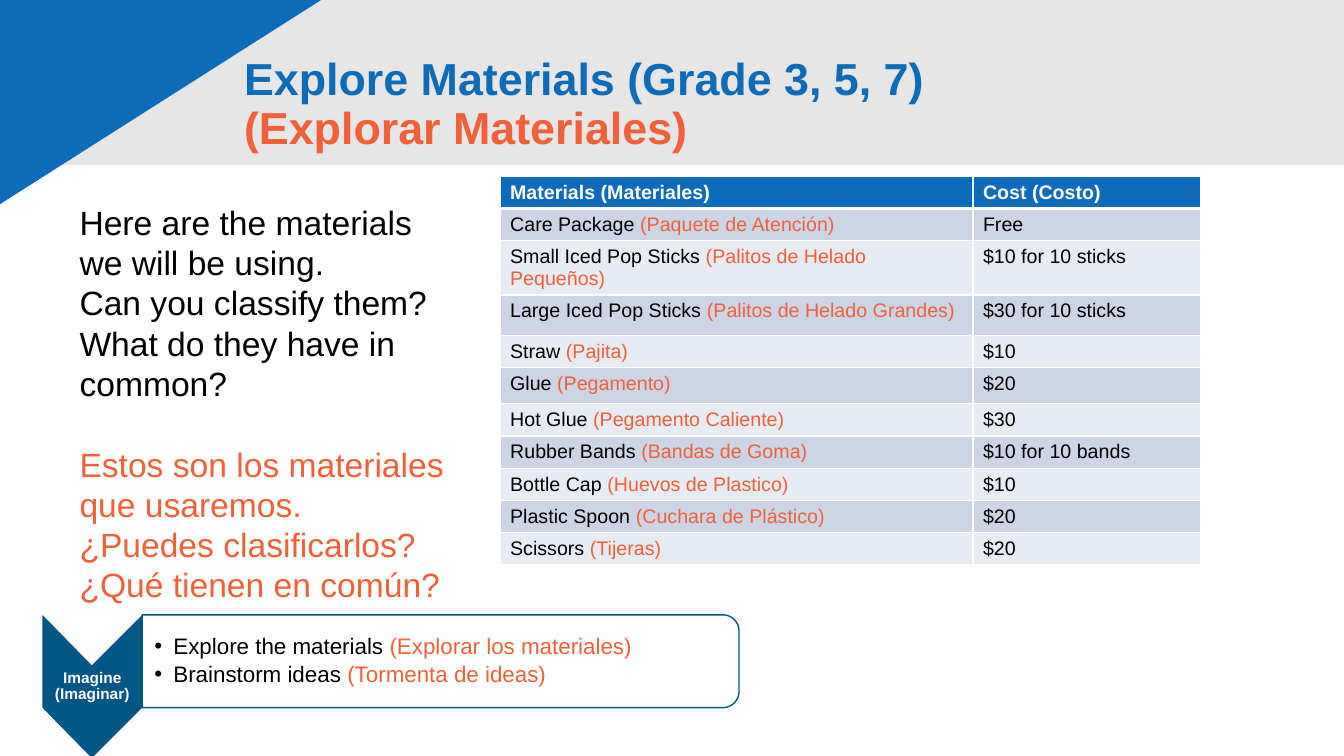
from math import cos, pi, sin

from lxml import etree
from pptx import Presentation
from pptx.dml.color import RGBColor
from pptx.enum.shapes import MSO_SHAPE
from pptx.enum.text import MSO_ANCHOR, PP_ALIGN
from pptx.oxml.ns import qn
from pptx.util import Pt

PX = 9144
RECTANGLE = MSO_SHAPE.RECTANGLE
RIGHT_TRIANGLE = MSO_SHAPE.RIGHT_TRIANGLE
MIDDLE = MSO_ANCHOR.MIDDLE
LEFT = PP_ALIGN.LEFT
CENTER = PP_ALIGN.CENTER

THEME = {
    "font": "Arial",
    "blue": RGBColor.from_string("0D6CB9"),
    "orange": RGBColor.from_string("F16038"),
    "navy": RGBColor.from_string("005786"),
    "gray": RGBColor.from_string("E7E6E6"),
    "black": RGBColor.from_string("000000"),
    "white": RGBColor.from_string("FFFFFF"),
    "bands": [RGBColor.from_string("E7EBF3"), RGBColor.from_string("CCD4E6")],
    "title": 32, "body": 24, "step": 16, "table": 14, "label": 11,
}


def add_text(paragraph, text, *, size, color="black", bold=False):
    run = paragraph.add_run()
    run.text = text
    run.font.name = THEME["font"]
    run.font.size = Pt(THEME[size])
    run.font.bold = bold
    run.font.color.rgb = THEME[color]


def add_outline(points, color):
    corners = [(round(x * PX), round(y * PX)) for x, y in points]
    builder = slide.shapes.build_freeform(*corners[0])
    builder.add_line_segments(corners[1:], close=True)
    shape = builder.convert_to_shape()
    shape.shadow.inherit = False
    shape.fill.solid()
    shape.fill.fore_color.rgb = THEME[color]
    shape.text_frame.word_wrap = True
    shape.text_frame.vertical_anchor = MIDDLE
    return shape


presentation = Presentation()
presentation.slide_width = 1333 * PX
presentation.slide_height = 750 * PX
slide = presentation.slides.add_slide(presentation.slide_layouts[5])

backdrop = [
    (RECTANGLE, (-26, -19, 1359, 183), "gray"),
    (RIGHT_TRIANGLE, (-257, -172, 846, 538), "blue"),
]
for preset, bounds, color in backdrop:
    shape = slide.shapes.add_shape(preset, *(value * PX for value in bounds))
    shape.shadow.inherit = False
    shape.fill.solid()
    shape.fill.fore_color.rgb = THEME[color]
    shape.line.fill.background()
    if preset == RIGHT_TRIANGLE:
        shape.rotation = 180
        shape.element.spPr.xfrm.set("flipH", "1")

chevron = add_outline(
    [(141, 610), (141, 702), (91, 752), (42, 702), (42, 610), (91, 660)], "navy")
chevron.line.fill.background()
frame = chevron.text_frame
frame.margin_left = frame.margin_right = PX
frame.margin_top = frame.margin_bottom = 47 * PX
paragraph = frame.paragraphs[0]
paragraph.alignment = CENTER
paragraph.line_spacing = 0.9
add_text(paragraph, "Imagine (Imaginar)", size="label", color="white", bold=True)

radius, steps = 16, 12
angles = [pi / 2 * step / steps for step in range(steps + 1)]
top_corner = [(717 + radius * sin(a), 626 - radius * cos(a)) for a in angles]
bottom_corner = [(717 + radius * cos(a), 686 + radius * sin(a)) for a in angles]
step_box = add_outline([(141, 610), *top_corner, *bottom_corner, (141, 702)], "white")
fill_color = step_box.element.spPr.find(f"{qn('a:solidFill')}/{qn('a:srgbClr')}")
etree.SubElement(fill_color, qn("a:alpha"), val="90000")
step_box.line.color.rgb = THEME["navy"]
step_box.line.width = Pt(1)
frame = step_box.text_frame
frame.margin_left = 12 * PX
frame.margin_right = frame.margin_top = frame.margin_bottom = 5 * PX
activities = [
    ("Explore the materials ", "(Explorar los materiales)"),
    ("Brainstorm ideas ", "(Tormenta de ideas)"),
]
for index, (english, spanish) in enumerate(activities):
    paragraph = frame.add_paragraph() if index else frame.paragraphs[0]
    paragraph.alignment = LEFT
    paragraph.line_spacing = 0.9
    if index:
        paragraph.space_before = Pt(2.4)
    properties = paragraph._p.get_or_add_pPr()
    properties.set("marL", str(19 * PX))
    properties.set("indent", str(-19 * PX))
    etree.SubElement(properties, qn("a:buFont"), typeface=THEME["font"])
    etree.SubElement(properties, qn("a:buChar"), char="•")
    add_text(paragraph, english, size="step")
    add_text(paragraph, spanish, size="step", color="orange")

prompt = slide.shapes.add_textbox(69 * PX, 195 * PX, 401 * PX, 444 * PX)
frame = prompt.text_frame
frame.word_wrap = True
questions = [
    ("Here are the materials we will be using.", "black"),
    ("Can you classify them?", "black"),
    ("What do they have in common?", "black"),
    ("Estos son los materiales que usaremos.", "orange"),
    ("¿Puedes clasificarlos?", "orange"),
    ("¿Qué tienen en común?", "orange"),
]
for index, (question, color) in enumerate(questions):
    paragraph = frame.add_paragraph() if index else frame.paragraphs[0]
    if index == 3:
        paragraph.space_before = Pt(28.8)
    add_text(paragraph, question, size="body", color=color)

title = slide.shapes.title
slide.shapes.element.append(title.element)
title.left, title.top, title.width, title.height = (
    value * PX for value in (232, 32, 970, 145))
title.text_frame.word_wrap = True
title.text_frame.vertical_anchor = MIDDLE
paragraph = title.text_frame.paragraphs[0]
paragraph.alignment = LEFT
paragraph.line_spacing = 0.9
add_text(paragraph, "Explore Materials (Grade 3, 5, 7)", size="title", color="blue", bold=True)
paragraph.add_line_break()
add_text(paragraph, "(Explorar Materiales)", size="title", color="orange", bold=True)

materials = [
    ("Materials (Materiales)", "", "Cost (Costo)", 32),
    ("Care Package ", "(Paquete de Atención)", "Free", 32),
    ("Small Iced Pop Sticks ", "(Palitos de Helado Pequeños)", "$10 for 10 sticks", 53),
    ("Large Iced Pop Sticks ", "(Palitos de Helado Grandes)", "$30 for 10 sticks", 40),
    ("Straw ", "(Pajita)", "$10", 32),
    ("Glue ", "(Pegamento)", "$20", 36),
    ("Hot Glue ", "(Pegamento Caliente)", "$30", 32),
    ("Rubber Bands ", "(Bandas de Goma)", "$10 for 10 bands", 32),
    ("Bottle Cap ", "(Huevos de Plastico)", "$10", 32),
    ("Plastic Spoon ", "(Cuchara de Plástico)", "$20", 32),
    ("Scissors ", "(Tijeras)", "$20", 32),
]
table_height = sum(row[-1] for row in materials)
table = slide.shapes.add_table(
    len(materials), 2, 496 * PX, 175 * PX, 695 * PX, table_height * PX).table
for column, width in zip(table.columns, (469, 226)):
    column.width = width * PX
for row, (english, spanish, cost, height) in enumerate(materials):
    table.rows[row].height = height * PX
    header = row == 0
    for column, (text, translation) in enumerate([(english, spanish), (cost, "")]):
        cell = table.cell(row, column)
        properties = cell._tc.get_or_add_tcPr()
        for side in "LRTB":
            thick = (row, side) in ((0, "B"), (1, "T"))
            border = etree.SubElement(
                properties, qn(f"a:ln{side}"), w=str(Pt(3 if thick else 1)))
            border_fill = etree.SubElement(border, qn("a:solidFill"))
            etree.SubElement(border_fill, qn("a:srgbClr"), val=str(THEME["white"]))
        cell.fill.solid()
        cell.fill.fore_color.rgb = THEME["blue"] if header else THEME["bands"][row % 2]
        paragraph = cell.text_frame.paragraphs[0]
        add_text(paragraph, text, size="table", color="white" if header else "black", bold=header)
        if translation:
            add_text(paragraph, translation, size="table", color="orange")

presentation.save("out.pptx")
